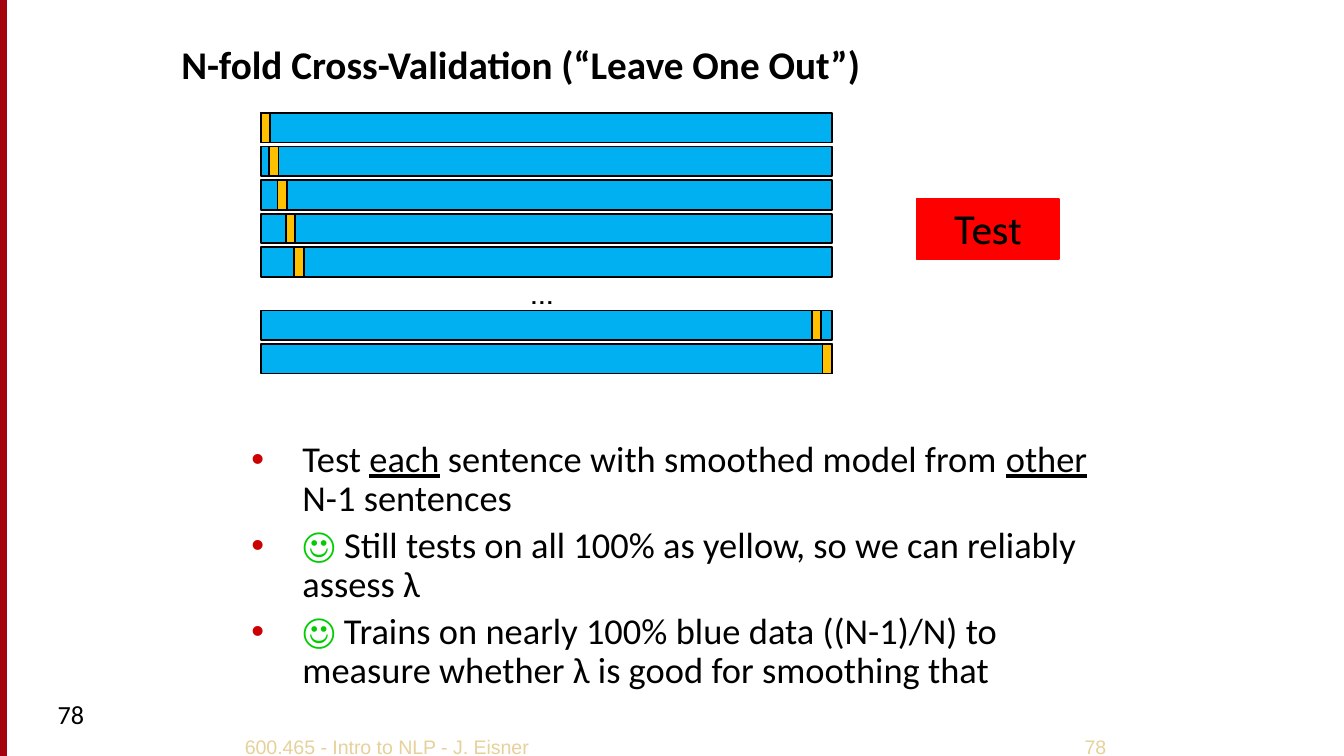
from dataclasses import dataclass

from lxml.etree import SubElement as Sub
from pptx import Presentation
from pptx.dml.color import RGBColor
from pptx.enum.shapes import MSO_SHAPE as Kind
from pptx.enum.text import MSO_ANCHOR as Anchor, MSO_AUTO_SIZE as Fit, PP_ALIGN as Align
from pptx.oxml.ns import qn
from pptx.util import Emu, Inches, Pt

WIDE = 10
HIGH = WIDE * 9 / 16
LEFT, TOP, SPAN, BAR, PITCH = 1.94, 0.84, 4.25, 0.22, 0.25
HELD = 0.07
BLACK, BLUE, GOLD, RED, GREEN, SAND = "000000", "00B0F0", "FFC000", "FF0000", "00CC00", "E7D19A"


@dataclass
class Box:
    x: float
    y: float
    w: float
    h: float


@dataclass
class Run:
    text: str
    color: str = BLACK
    bold: bool = False
    line: bool = False
    slant: bool = False


@dataclass
class Fold:
    """A bar at a grid row, with its held-out part at a distance from the left."""
    row: float
    shift: float


def paint(color: str) -> RGBColor:
    return RGBColor.from_string(color)


def place(shape, box: Box) -> None:
    shape.left, shape.top = Inches(box.x), Inches(box.y)
    shape.width, shape.height = Inches(box.w), Inches(box.h)


def block(slide, box: Box, fill: str, edge: str, line: float = 1):
    shape = slide.shapes.add_shape(Kind.RECTANGLE, 0, 0, 0, 0)
    place(shape, box)
    shape.shadow.inherit = False
    shape.fill.solid()
    shape.fill.fore_color.rgb = paint(fill)
    shape.line.color.rgb = paint(edge)
    shape.line.width = Pt(line)
    return shape


def write(para, runs: list[Run], size: float, face: str) -> None:
    for item in runs:
        run = para.add_run()
        run.text = item.text
        font = run.font
        font.name, font.size, font.bold = face, Pt(size), item.bold
        font.underline, font.italic = item.line, item.slant
        font.color.rgb = paint(item.color)


def fill(shape, run: Run, size: float, face: str, align=Align.LEFT,
         anchor=Anchor.TOP, wrap: bool = True) -> None:
    frame = shape.text_frame
    frame.word_wrap, frame.auto_size = wrap, Fit.NONE
    frame.vertical_anchor = anchor
    para = frame.paragraphs[0]
    para.alignment = align
    write(para, [run], size, face)


def label(slide, box: Box, run: Run, size: float, face: str, **style) -> None:
    shape = slide.shapes.add_textbox(0, 0, 0, 0)
    place(shape, box)
    fill(shape, run, size, face, **style)


def bullet(para, color: str) -> None:
    props = para._p.get_or_add_pPr()
    props.set("marL", str(Inches(0.38)))
    props.set("indent", str(-Inches(0.38)))
    Sub(Sub(props, qn("a:buClr")), qn("a:srgbClr"), val=color)
    Sub(props, qn("a:buFont"), typeface="Arial")
    Sub(props, qn("a:buChar"), char="•")


def draw(slide, fold: Fold) -> None:
    y = TOP + fold.row * PITCH
    block(slide, Box(LEFT, y, SPAN, BAR), BLUE, BLACK)
    block(slide, Box(LEFT + fold.shift, y, HELD, BAR), GOLD, BLACK)


def main() -> None:
    deck = Presentation()
    deck.slide_width, deck.slide_height = Inches(WIDE), Inches(HIGH)
    slide = deck.slides.add_slide(deck.slide_layouts[1])
    title, body = slide.placeholders

    block(slide, Box(0, 0, 0.05, HIGH), "A40508", "A4001D", 0.75)

    place(title, Box(1.25, -0.11, 8.17, 0.81))
    fill(title, Run("N-fold Cross-Validation (“Leave One Out”)", bold=True),
         21, "Calibri", anchor=Anchor.BOTTOM)

    last = SPAN - HELD
    folds = [Fold(i, i * PITCH / 4) for i in range(5)]
    folds += [Fold(5.88, last - 0.08), Fold(6.88, last)]
    for fold in folds:
        draw(slide, fold)
    label(slide, Box(3.85, 1.97, 0.41, 0.4), Run("…"), 18, "Cabin", wrap=False)

    test = block(slide, Box(6.82, 1.48, 1.06, 0.45), RED, RED)
    fill(test, Run("Test"), 21, "Cabin", align=Align.CENTER, anchor=Anchor.MIDDLE)

    points = [
        [Run("Test "), Run("each", line=True), Run(" sentence with smoothed model from "),
         Run("other", line=True), Run(" ", slant=True), Run("N-1 sentences")],
        [Run("☺ ", GREEN, True),
         Run("Still tests on all 100% as yellow, so we can reliably assess λ")],
        [Run("☺", GREEN, True),
         Run(" Trains on nearly 100% blue data ((N-1)/N) to measure whether λ "
             "is good for smoothing that")],
    ]
    place(body, Box(1.77, 3.23, 6.47, 4.02))
    frame = body.text_frame
    frame.auto_size = Fit.NONE
    for i, runs in enumerate(points):
        para = frame.add_paragraph() if i else frame.paragraphs[0]
        bullet(para, "CC0000")
        para.line_spacing = 0.9
        para.space_before = Pt(4) if i else Emu(0)
        write(para, runs, 19.5, "Calibri")

    label(slide, Box(0.33, 5.15, 2.17, 0.38), Run("78"), 14, "Calibri")
    label(slide, Box(1.69, 5.31, 2.38, 0.38), Run("600.465 - Intro to NLP - J. Eisner", SAND),
          10.5, "Arial", align=Align.CENTER, anchor=Anchor.BOTTOM)
    label(slide, Box(6.77, 5.31, 1.56, 0.38), Run("78", SAND),
          10.5, "Arial", align=Align.RIGHT, anchor=Anchor.BOTTOM)

    deck.save("out.pptx")


if __name__ == "__main__":
    main()
